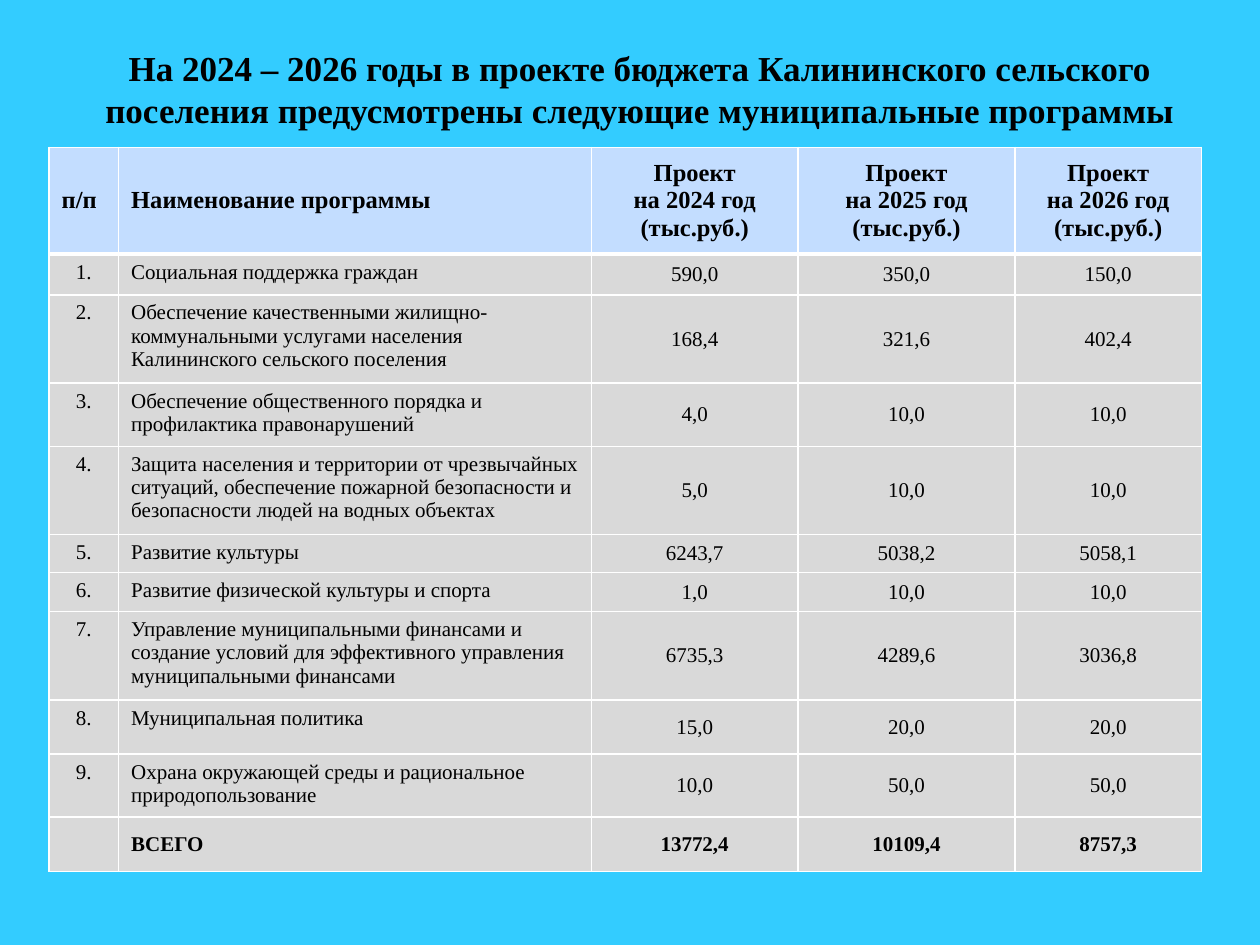
from dataclasses import dataclass

from lxml import etree
from pptx import Presentation
from pptx.dml.color import RGBColor
from pptx.enum.text import MSO_ANCHOR, MSO_AUTO_SIZE, PP_ALIGN
from pptx.oxml.ns import qn
from pptx.util import Cm, Pt

LEFT, CENTER = PP_ALIGN.LEFT, PP_ALIGN.CENTER
TOP, MIDDLE = MSO_ANCHOR.TOP, MSO_ANCHOR.MIDDLE
NO_AUTOFIT = MSO_AUTO_SIZE.NONE
TITLE_ONLY = 5


@dataclass(frozen=True)
class Theme:
    """Colours, font and type sizes of the slide."""
    font: str = "Times New Roman"
    background: str = "33CCFF"
    header: str = "C3DDFF"
    body: str = "D9D9D9"
    border: str = "FFFFFF"
    ink: str = "000000"
    title_size: int = 20
    header_size: int = 14
    body_size: int = 12
    border_width: int = 1
    header_rule: int = 3


THEME = Theme()
HEADING = ("На 2024 – 2026 годы в проекте бюджета Калининского сельского "
           "поселения предусмотрены следующие муниципальные программы")
YEARS = (2024, 2025, 2026)
PROGRAMS = [
    ("Социальная поддержка граждан", "590,0", "350,0", "150,0"),
    ("Обеспечение качественными жилищно-коммунальными услугами населения "
     "Калининского сельского поселения", "168,4", "321,6", "402,4"),
    ("Обеспечение общественного порядка и профилактика правонарушений",
     "4,0", "10,0", "10,0"),
    ("Защита населения и территории от чрезвычайных ситуаций, обеспечение "
     "пожарной безопасности и безопасности людей на водных объектах",
     "5,0", "10,0", "10,0"),
    ("Развитие культуры", "6243,7", "5038,2", "5058,1"),
    ("Развитие физической культуры и спорта", "1,0", "10,0", "10,0"),
    ("Управление муниципальными финансами и создание условий для эффективного "
     "управления муниципальными финансами", "6735,3", "4289,6", "3036,8"),
    ("Муниципальная политика", "15,0", "20,0", "20,0"),
    ("Охрана окружающей среды и рациональное природопользование",
     "10,0", "50,0", "50,0"),
]
TOTAL = ("", "ВСЕГО", "13772,4", "10109,4", "8757,3")
COLUMN_SHARES = (0.06, 0.41, 0.18, 0.19, 0.16)
COLUMN_WIDTHS = (1.4, 9.53, 4.17, 4.37, 3.76)
ROW_HEIGHTS = (2.15, 0.82, 1.78, 1.27, 1.78, 0.76, 0.79, 1.78, 1.09, 1.27, 1.09)


def format_text(frame, size, bold, align):
    """Apply the theme font to every paragraph of a text frame."""
    for paragraph in frame.paragraphs:
        paragraph.alignment = align
        for run in paragraph.runs:
            run.font.name = THEME.font
            run.font.size = Pt(size)
            run.font.bold = bold
            run.font.color.rgb = RGBColor.from_string(THEME.ink)


def add_borders(cell, top, bottom):
    """Draw the four borders of a cell, with the given top and bottom widths."""
    properties = cell._tc.get_or_add_tcPr()
    side = THEME.border_width
    for tag, width in (("a:lnL", side), ("a:lnR", side), ("a:lnT", top), ("a:lnB", bottom)):
        line = etree.SubElement(properties, qn(tag), w=str(Pt(width)))
        fill = etree.SubElement(line, qn("a:solidFill"))
        etree.SubElement(fill, qn("a:srgbClr"), val=THEME.border)


def place_title(slide, left, top, width, height):
    """Put the heading into the title placeholder."""
    title = slide.shapes.title
    title.left, title.top, title.width, title.height = left, top, width, height
    frame = title.text_frame
    frame.text = HEADING
    frame.word_wrap = True
    frame.auto_size = NO_AUTOFIT
    frame.vertical_anchor = TOP
    format_text(frame, THEME.title_size, True, CENTER)


def fill_cell(cell, content, row, column, last_row):
    """Write and format one cell according to its place in the table."""
    is_header, is_total, is_amount = row == 0, row == last_row, column > 1
    thin, thick = THEME.border_width, THEME.header_rule
    add_borders(cell, thick if row == 1 else thin, thick if is_header else thin)
    cell.fill.solid()
    cell.fill.fore_color.rgb = RGBColor.from_string(THEME.header if is_header else THEME.body)
    cell.vertical_anchor = MIDDLE if is_header or is_total or is_amount else TOP
    if is_amount and not is_header:
        cell.margin_left = cell.margin_right = Cm(0.18)
        cell.margin_top = cell.margin_bottom = 0
    cell.text_frame.text = content
    centred = is_amount or (column == 0 and not is_header)
    format_text(cell.text_frame, THEME.header_size if is_header else THEME.body_size,
                is_header or is_total, CENTER if centred else LEFT)


def place_programs(slide, left, top, width, height):
    """Build the table of programmes, scaled to the given box."""
    header = ["п/п", "Наименование программы"]
    header += [f"Проект\nна {year} год\n(тыс.руб.)" for year in YEARS]
    numbered = [(f"{number}.", *program) for number, program in enumerate(PROGRAMS, 1)]
    rows = [header, *numbered, TOTAL]
    table = slide.shapes.add_table(len(rows), len(header), left, top, width, height).table
    table.horz_banding = False
    for column, share in zip(table.columns, COLUMN_WIDTHS):
        column.width = int(width * share / sum(COLUMN_WIDTHS))
    for row, share in zip(table.rows, ROW_HEIGHTS):
        row.height = int(height * share / sum(ROW_HEIGHTS))
    for r, contents in enumerate(rows):
        for c, content in enumerate(contents):
            fill_cell(table.cell(r, c), content, r, c, len(rows) - 1)


def main():
    """Build and save the slide."""
    deck = Presentation()
    deck.slide_width, deck.slide_height = Cm(25.4), Cm(19.05)
    slide = deck.slides.add_slide(deck.slide_layouts[TITLE_ONLY])
    slide.background.fill.solid()
    slide.background.fill.fore_color.rgb = RGBColor.from_string(THEME.background)
    place_title(slide, Cm(1.4), Cm(0.8), Cm(23), Cm(1.95))
    place_programs(slide, Cm(0.99), Cm(2.97), Cm(23.23), Cm(14.6))
    deck.save("out.pptx")


if __name__ == "__main__":
    main()
